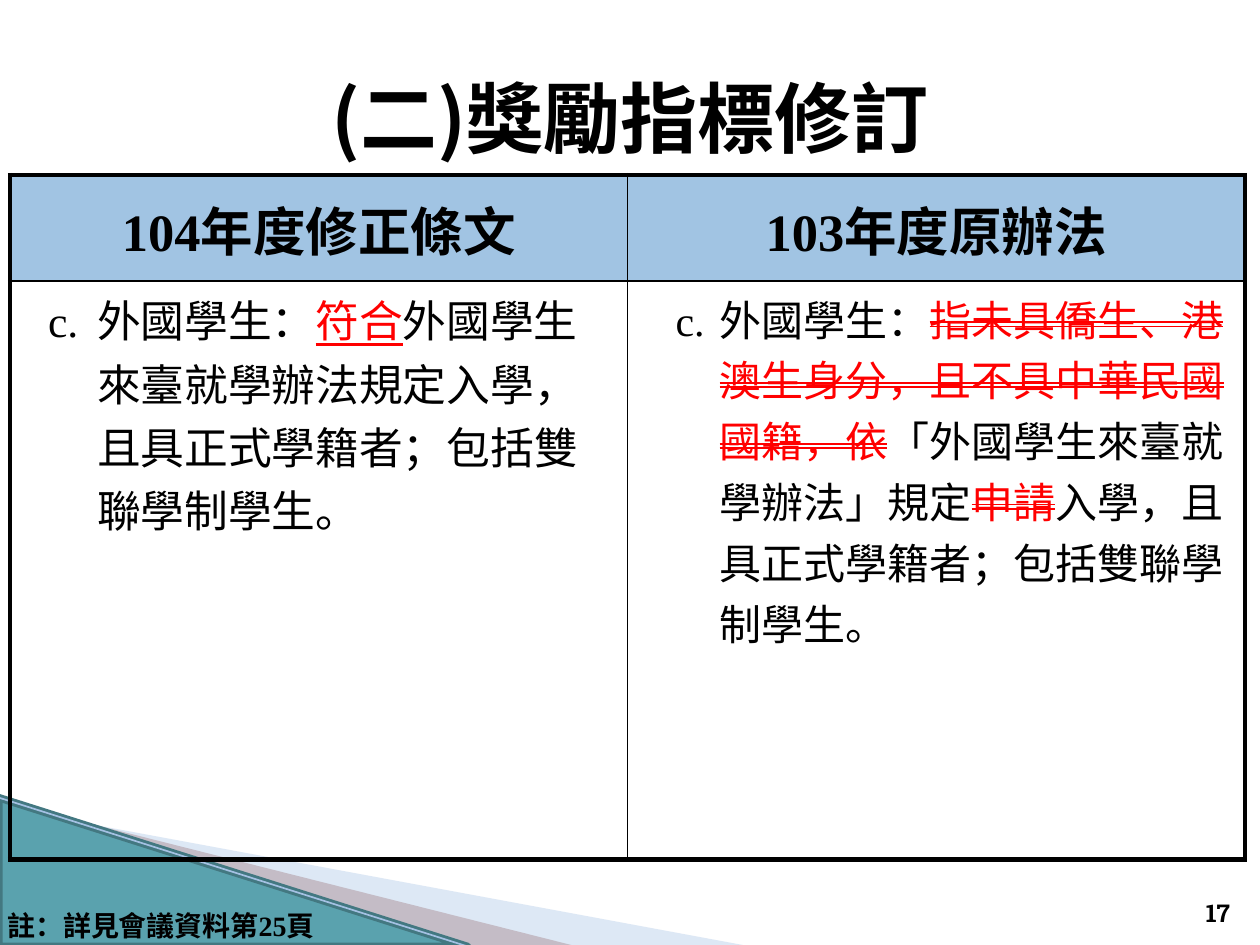
import pptx
import pptx.util
import pptx.dml.color
import pptx.enum.shapes
import pptx.enum.text
import pptx.oxml.ns
import pptx.oxml.xmlchemy
from dataclasses import dataclass

Pt = pptx.util.Pt
qn = pptx.oxml.ns.qn
make = pptx.oxml.xmlchemy.OxmlElement
ALIGN = pptx.enum.text.PP_ALIGN
ANCHOR = pptx.enum.text.MSO_ANCHOR


@dataclass(frozen=True)
class Theme:
    ink: str = "000000"
    red: str = "FF0000"
    head: str = "A1C4E3"
    pale: str = "ABC6E6"
    mauve: str = "C4BCC6"
    teal: str = "5AA2AE"
    edge: str = "437881"
    sky: str = "A4C1E3"
    serif: str = "Times New Roman"
    sans: str = "Noto Sans CJK SC"
    slab: str = "Roboto Slab"
    title: int = 44
    label: int = 30
    new: int = 25
    old: int = 24
    note: int = 16
    page: int = 14


T = Theme()


def rgb(code):
    return pptx.dml.color.RGBColor.from_string(code)


def add(parent, tag, **attrs):
    """Append an XML child with the given attributes."""
    node = make(tag)
    for key, value in attrs.items():
        node.set(key, str(value))
    parent.append(node)
    return node


def style(para, face, size, bold=False, align=ALIGN.LEFT):
    font = para.font
    font.name, font.size, font.bold = face, Pt(size), bold
    font.color.rgb = rgb(T.ink)
    add(font._element, "a:ea", typeface=T.sans)
    para.alignment = align


def label(slide, box, text, face, size, align=ALIGN.LEFT, anchor=ANCHOR.TOP):
    """One bold line of text in a box."""
    frame = slide.shapes.add_textbox(*map(Pt, box)).text_frame
    frame.word_wrap = True
    frame.vertical_anchor = anchor
    para = frame.paragraphs[0]
    para.text = text
    style(para, face, size, True, align)


def wedge(slide, spot, points, color, alpha=None):
    """A filled outline; points are relative to the spot."""
    left, top = spot
    spots = [(Pt(left + x), Pt(top + y)) for x, y in points]
    pen = slide.shapes.build_freeform(*spots[0])
    pen.add_line_segments(spots[1:], close=True)
    shape = pen.convert_to_shape()
    shape.shadow.inherit = False
    shape.fill.solid()
    shape.fill.fore_color.rgb = rgb(color)
    shape.line.fill.background()
    if alpha:
        fill = shape._element.spPr.find(qn("a:solidFill"))
        add(fill[0], "a:alpha", val=alpha * 1000)


def corner(slide, box):
    """Layered wedges in the lower left corner."""
    left, top, width, height = box
    wedge(slide, (left + 40.3, top + 12.2),
          [(0, 0.7), (388.8, 72.7), (288.7, 72.7), (0, 0)], T.pale, 40)
    wedge(slide, (left + 38.9, top + 11.5),
          [(0, 0), (290.9, 73.4), (229.7, 74.2), (0.7, 0.7)], T.mauve)
    shape = slide.shapes.add_shape(
        pptx.enum.shapes.MSO_SHAPE.RIGHT_TRIANGLE, *map(Pt, box))
    shape.shadow.inherit = False
    shape.fill.solid()
    shape.fill.fore_color.rgb = rgb(T.teal)
    shape.line.color.rgb = rgb(T.edge)
    shape.line.width = Pt(4.33)
    line = slide.shapes.add_connector(
        pptx.enum.shapes.MSO_CONNECTOR.STRAIGHT,
        Pt(left), Pt(top), Pt(left + width), Pt(top + height))
    line.line.color.rgb = rgb(T.sky)
    line.line.width = Pt(0.95)
    add(line._element.spPr, "a:effectLst")


def border(cell, row, col):
    """Thick lines on the outside of the table, thin ones inside."""
    props = cell._tc.get_or_add_tcPr()
    outer = {"L": col == 0, "R": col == 1, "T": row == 0, "B": row == 1}
    for spot, (side, thick) in enumerate(outer.items()):
        line = make("a:ln" + side)
        line.set("w", str(int(Pt(3 if thick else 1))))
        add(add(line, "a:solidFill"), "a:srgbClr", val=T.ink)
        props.insert(spot, line)


def clause(para, parts, size, left, hang):
    """A lettered clause; marked parts are red and underlined or struck."""
    style(para, T.serif, size)
    props = para._p.get_or_add_pPr()
    props.set("marL", str(int(Pt(left))))
    props.set("indent", str(int(Pt(-hang))))
    for text, mark in parts:
        run = para.add_run()
        run.text = text
        if mark:
            run.font.color.rgb = rgb(T.red)
        if mark == "under":
            run.font.underline = True
        elif mark == "strike":
            run.font._element.set("strike", "dblStrike")


def compare(slide, box, heads, clauses):
    """Two-column table of the new and the old wording."""
    table = slide.shapes.add_table(2, 2, *map(Pt, box)).table
    table.first_row = table.horz_banding = False
    for col in table.columns:
        col.width = Pt(box[2] / 2)
    for row, high in zip(table.rows, (60.5, box[3] - 60.5)):
        row.height = Pt(high)
    for col, (head, body) in enumerate(zip(heads, clauses)):
        top, low = table.cell(0, col), table.cell(1, col)
        top.fill.solid()
        top.fill.fore_color.rgb = rgb(T.head)
        top.vertical_anchor = ANCHOR.MIDDLE
        para = top.text_frame.paragraphs[0]
        para.text = head
        style(para, T.serif, T.label, True, ALIGN.CENTER)
        low.fill.background()
        clause(low.text_frame.paragraphs[0], *body)
        border(top, 0, col)
        border(low, 1, col)


def main():
    deck = pptx.Presentation()
    deck.slide_width, deck.slide_height = Pt(720), Pt(540)
    slide = deck.slides.add_slide(deck.slide_layouts[6])

    corner(slide, (-0.7, 455.8, 267.8, 85))

    # Page number, title and note
    label(slide, (666, 504.7, 43.9, 28.8), "17", T.slab, T.page,
          ALIGN.RIGHT, ANCHOR.BOTTOM)
    label(slide, (0, 21.6, 720, 90), "(二)獎勵指標修訂", T.sans, T.title,
          ALIGN.CENTER, ANCHOR.MIDDLE)
    label(slide, (-2.9, 515.5, 226.8, 26.6), "註：詳見會議資料第25頁",
          T.serif, T.note)

    # Wording of both years
    new = [("c.\t外國學生：", None), ("符合", "under"),
           ("外國學生來臺就學辦法規定入學，且具正式學籍者；包括雙聯學制學生。", None)]
    old = [("c.\t外國學生：", None),
           ("指未具僑生、港澳生身分，且不具中華民國國籍，依", "strike"),
           ("「外國學生來臺就學辦法」規定", None), ("申請", "strike"),
           ("入學，且具正式學籍者；包括雙聯學制學生。", None)]
    compare(slide, (5.8, 100.1, 705.6, 391),
            ("104年度修正條文", "103年度原辦法"),
            ((new, T.new, 42.5, 28), (old, T.old, 45.4, 25.2)))
    deck.save("out.pptx")


if __name__ == "__main__":
    main()
